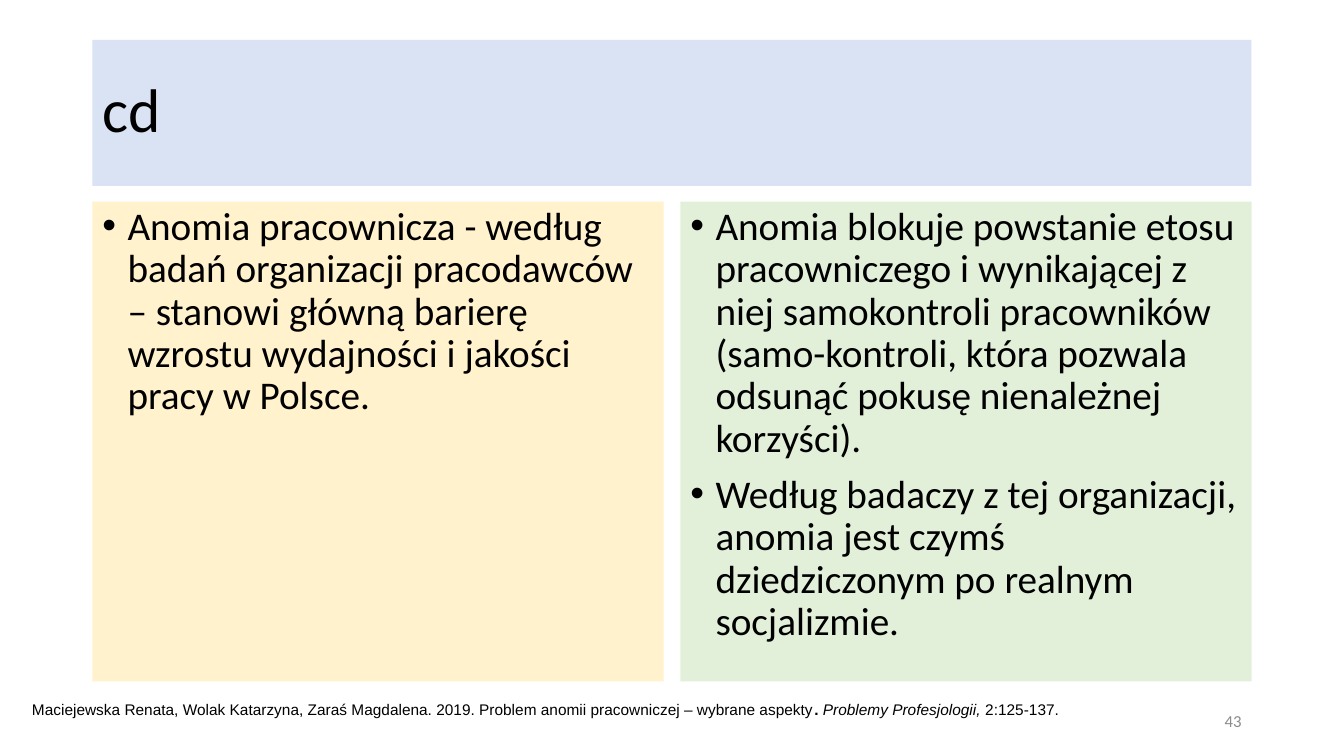
from lxml import etree
from pptx import Presentation
from pptx.dml.color import RGBColor
from pptx.enum.shapes import MSO_SHAPE as SHAPE
from pptx.enum.text import MSO_ANCHOR as ANCHOR, PP_ALIGN as ALIGN
from pptx.oxml.ns import qn
from pptx.util import Pt

PX = 9525  # EMU per px, 96 px to the inch
COLORS = {"title": "DAE3F3", "left": "FFF2CC", "right": "E2F0D9",
          "text": "000000", "number": "8C8C8C"}

prs = Presentation()
prs.slide_width, prs.slide_height = 1280 * PX, 720 * PX
s = prs.slides.add_slide(prs.slide_layouts[6])


def add_frame(x, y, w, h, anchor, fill=None):
    box = [v * PX for v in (x, y, w, h)]
    if fill:
        sp = s.shapes.add_shape(SHAPE.RECTANGLE, *box)
        sp.shadow.inherit = False
        sp.fill.solid()
        sp.fill.fore_color.rgb = RGBColor.from_string(COLORS[fill])
        sp.line.fill.background()
    else:
        sp = s.shapes.add_textbox(*box)
    tf = sp.text_frame
    tf.word_wrap = True
    tf.vertical_anchor = anchor
    return tf


def add_run(p, text, size, font="Calibri", color="text", bold=False, italic=False):
    r = p.add_run()
    r.text = text
    f = r.font
    f.size, f.name, f.bold, f.italic = Pt(size), font, bold, italic
    f.color.rgb = RGBColor.from_string(COLORS[color])


# Title band
p = add_frame(88, 38, 1104, 139, ANCHOR.MIDDLE, "title").paragraphs[0]
p.alignment = ALIGN.LEFT
p.line_spacing = 0.9
add_run(p, "cd", 44)

# Two bulleted columns
columns = [
    ("left", 88, [
        "Anomia pracownicza - według badań organizacji pracodawców – stanowi "
        "główną barierę wzrostu wydajności i jakości pracy w Polsce."]),
    ("right", 648, [
        "Anomia blokuje powstanie etosu pracowniczego i wynikającej z niej "
        "samokontroli pracowników (samo-kontroli, która pozwala odsunąć pokusę "
        "nienależnej korzyści).",
        "Według badaczy z tej organizacji, anomia jest czymś dziedziczonym po "
        "realnym socjalizmie."]),
]
for fill, x, items in columns:
    tf = add_frame(x, 192, 544, 457, ANCHOR.TOP, fill)
    for i, item in enumerate(items):
        p = tf.add_paragraph() if i else tf.paragraphs[0]
        p.alignment = ALIGN.LEFT
        p.line_spacing = 0.9
        p.space_before = Pt(10)
        pPr = p._p.get_or_add_pPr()
        pPr.set("marL", str(24 * PX))
        pPr.set("indent", str(-24 * PX))
        etree.SubElement(pPr, qn("a:buFont")).set("typeface", "Arial")
        etree.SubElement(pPr, qn("a:buChar")).set("char", "•")
        add_run(p, item, 28)

# Slide number
p = add_frame(904, 667, 288, 38, ANCHOR.MIDDLE).paragraphs[0]
p.alignment = ALIGN.RIGHT
add_run(p, "43", 12, color="number")

# Source citation
p = add_frame(21, 662, 1104, 28, ANCHOR.TOP).paragraphs[0]
citation = [
    ("Maciejewska Renata, Wolak Katarzyna, Zaraś Magdalena. 2019. "
     "Problem anomii pracowniczej – wybrane aspekty", False, False),
    (". ", True, False),
    ("Problemy Profesjologii,", False, True),
    (" 2:125-137.", False, False),
]
for text, bold, italic in citation:
    add_run(p, text, 11, "Arial", bold=bold, italic=italic)

prs.save("out.pptx")
